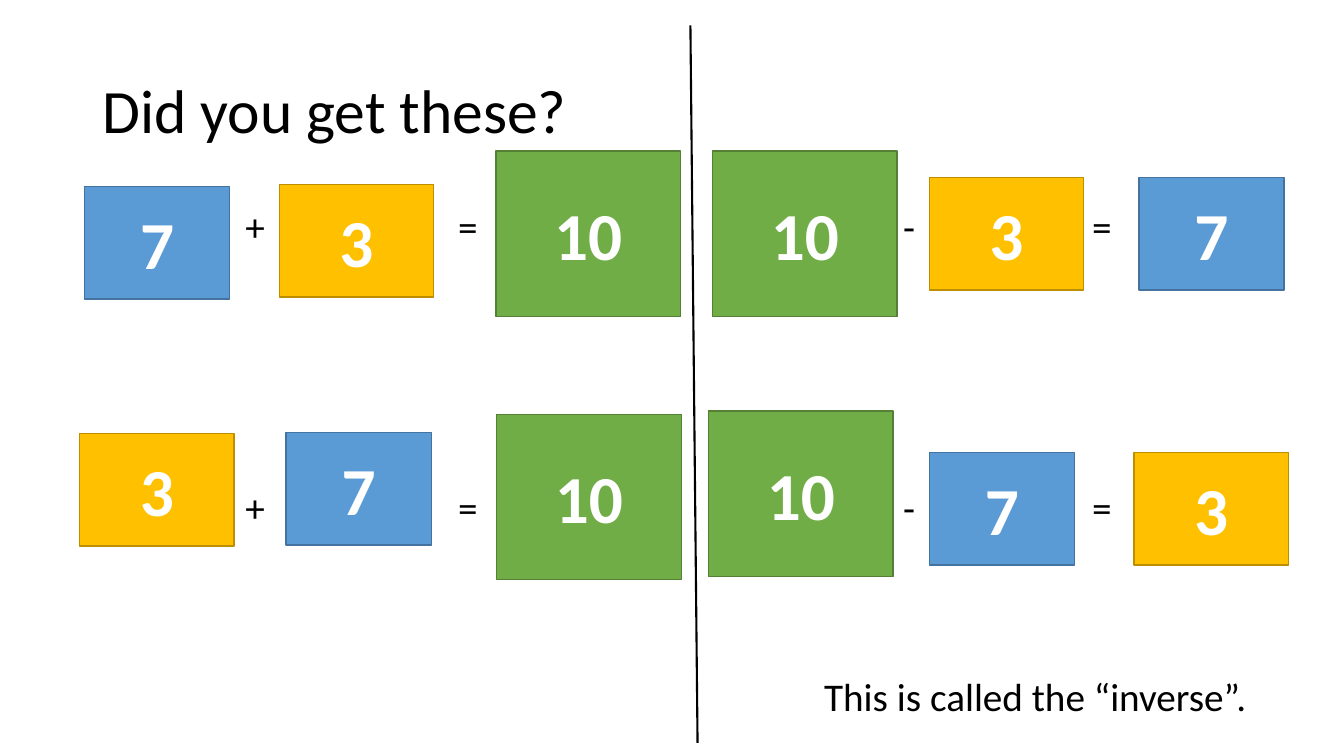
from dataclasses import dataclass

from lxml.etree import SubElement
from pptx import Presentation
from pptx.dml.color import RGBColor
from pptx.enum.shapes import MSO_CONNECTOR, MSO_SHAPE
from pptx.enum.text import MSO_ANCHOR, PP_ALIGN
from pptx.oxml.ns import qn
from pptx.util import Cm, Pt

BLACK = RGBColor(0x00, 0x00, 0x00)
WHITE = RGBColor(0xFF, 0xFF, 0xFF)
BLUE = RGBColor(0x5B, 0x9B, 0xD5)
NAVY = RGBColor(0x43, 0x73, 0x9E)
GOLD = RGBColor(0xFF, 0xC0, 0x00)
OCHRE = RGBColor(0xBD, 0x8E, 0x00)
GREEN = RGBColor(0x70, 0xAD, 0x47)
MOSS = RGBColor(0x53, 0x80, 0x35)


@dataclass(frozen=True)
class Kind:
    """Look of a number tile, sizes in cm."""
    text: str
    width: float
    height: float
    fill: RGBColor
    edge: RGBColor


@dataclass(frozen=True)
class Tile:
    kind: Kind
    left: float
    top: float


SEVEN = Kind("7", 3.66, 2.84, BLUE, NAVY)
THREE = Kind("3", 3.89, 2.84, GOLD, OCHRE)
TEN = Kind("10", 4.65, 4.17, GREEN, MOSS)

TILES = [
    # 7 + 3 = 10
    Tile(SEVEN, 2.13, 4.7), Tile(THREE, 7.04, 4.65), Tile(TEN, 12.5, 3.81),
    # 10 - 3 = 7
    Tile(TEN, 17.96, 3.81), Tile(THREE, 23.42, 4.47), Tile(SEVEN, 28.7, 4.47),
    # 3 + 7 = 10
    Tile(THREE, 2.01, 10.92), Tile(SEVEN, 7.21, 10.9), Tile(TEN, 12.52, 10.44),
    # 10 - 7 = 3
    Tile(TEN, 17.86, 10.36), Tile(SEVEN, 23.42, 11.4), Tile(THREE, 28.58, 11.4),
]

# Centres of the signs, in cm
SIGNS = [("+", 6.43), ("=", 11.79), ("-", 22.91), ("=", 27.77)]
ROWS = [5.69, 12.78]
SIDE = 1.2


def write(shape, text: str, *, size: float = 28, color: RGBColor = BLACK,
          bold: bool = False, align=PP_ALIGN.CENTER, pitch: float = 1.0,
          wrap: bool = True) -> None:
    frame = shape.text_frame
    frame.word_wrap = wrap
    frame.vertical_anchor = MSO_ANCHOR.MIDDLE
    para = frame.paragraphs[0]
    para.alignment = align
    para.line_spacing = pitch
    run = para.add_run()
    run.text = text
    run.font.name = "Calibri"
    run.font.size = Pt(size)
    run.font.bold = bold
    run.font.color.rgb = color


def add_box(slide, left: float, top: float, width: float, height: float):
    return slide.shapes.add_textbox(Cm(left), Cm(top), Cm(width), Cm(height))


def add_tile(slide, tile: Tile) -> None:
    kind = tile.kind
    shape = slide.shapes.add_shape(
        MSO_SHAPE.RECTANGLE, Cm(tile.left), Cm(tile.top),
        Cm(kind.width), Cm(kind.height))
    shape.shadow.inherit = False
    shape.fill.solid()
    shape.fill.fore_color.rgb = kind.fill
    shape.line.color.rgb = kind.edge
    shape.line.width = Pt(1)
    write(shape, kind.text, size=48, color=WHITE, bold=True)


def add_sign(slide, text: str, x: float, y: float) -> None:
    box = add_box(slide, x - SIDE / 2, y - SIDE / 2, SIDE, SIDE)
    frame = box.text_frame
    frame.margin_left = frame.margin_right = Cm(0)
    frame.margin_top = frame.margin_bottom = Cm(0)
    write(box, text)


def main() -> None:
    deck = Presentation()
    deck.slide_width, deck.slide_height = Cm(33.87), Cm(19.05)
    slide = deck.slides.add_slide(deck.slide_layouts[6])

    # Title
    title = add_box(slide, 2.33, 1.01, 29.21, 3.68)
    write(title, "Did you get these?", size=44, align=PP_ALIGN.LEFT, pitch=0.9)

    # Sums
    for y in ROWS:
        for text, x in SIGNS:
            add_sign(slide, text, x, y)
    for tile in TILES:
        add_tile(slide, tile)

    # Divider
    line = slide.shapes.add_connector(
        MSO_CONNECTOR.STRAIGHT, Cm(17.4), Cm(0.64), Cm(17.58), Cm(18.72))
    line.line.color.rgb = BLACK
    line.line.width = Pt(1.5)
    SubElement(line.line._get_or_add_ln().getparent(), qn("a:effectLst"))

    # Closing note
    note = add_box(slide, 20.52, 16.81, 11.28, 1.45)
    write(note, "This is called the “inverse”.", align=PP_ALIGN.LEFT, wrap=False)

    deck.save("out.pptx")


if __name__ == "__main__":
    main()
